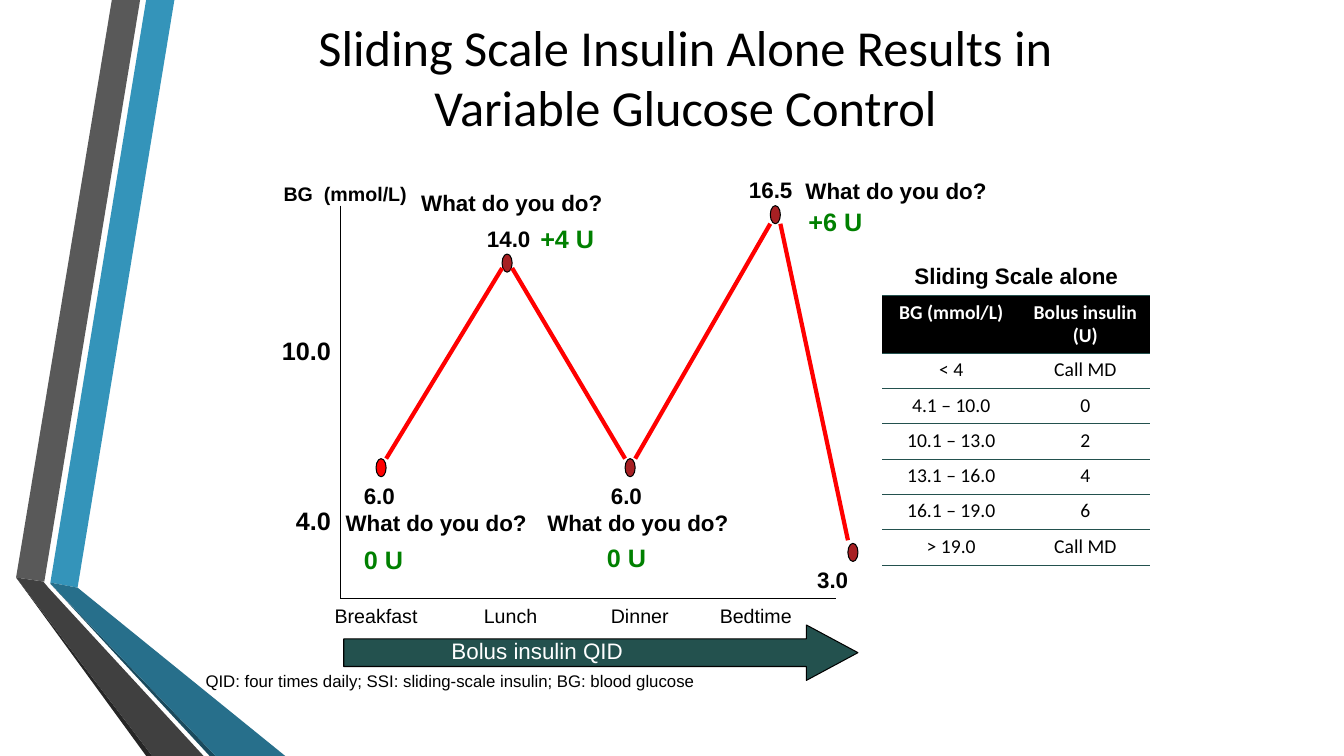
from dataclasses import dataclass
from typing import Optional

import lxml.etree
import pptx
import pptx.dml.color
import pptx.enum.shapes
import pptx.enum.text
import pptx.oxml
import pptx.oxml.ns
import pptx.util

Inches = pptx.util.Inches
Shape = pptx.enum.shapes.MSO_SHAPE
Align = pptx.enum.text.PP_ALIGN
Anchor = pptx.enum.text.MSO_ANCHOR
qn = pptx.oxml.ns.qn


@dataclass(frozen=True)
class Theme:
    body_font: str = "Arial"
    title_font: str = "Calibri"
    title: float = 36
    large: float = 18
    medium: float = 16
    small: float = 14
    note: float = 12
    black: str = "000000"
    white: str = "FFFFFF"
    red: str = "FF0000"
    dark_red: str = "A72023"
    green: str = "008000"
    teal: str = "23514E"


THEME = Theme()


@dataclass(frozen=True)
class Label:
    text: str
    left: float
    top: float
    width: float
    height: float = 0.37
    size: float = THEME.medium
    bold: bool = True
    color: str = THEME.black
    align: Align = Align.LEFT
    font: str = THEME.body_font
    inset: Optional[float] = None
    anchor: Anchor = Anchor.TOP


@dataclass(frozen=True)
class Reading:
    """A glucose marker; join is the height at which its line segments meet it."""
    left: float
    top: float
    join: float
    fill: str = THEME.dark_red


@dataclass(frozen=True)
class Ribbon:
    fill: str
    outline: tuple


RIBBONS = [
    Ribbon("3494BA", ((0.5, 5.78), (0.77, 5.83), (1.73, 0), (1.45, 0))),
    Ribbon("595959", ((1.39, 0), (1.11, 0), (0.16, 5.73), (0.44, 5.77))),
    Ribbon("262626", ((0.16, 5.73), (1.45, 7.5), (1.51, 7.5))),
    Ribbon("1A4A5D", ((0.5, 5.79), (2.08, 7.5), (2.14, 7.5))),
    Ribbon("276F8B", ((0.5, 5.79), (2.14, 7.5), (2.83, 7.5), (0.77, 5.83), (0.5, 5.78))),
    Ribbon("404040", ((2.02, 7.5), (0.48, 5.83), (0.43, 5.77), (0.16, 5.73), (1.51, 7.5))),
]

MARKER_WIDTH, MARKER_HEIGHT = 0.1, 0.18
READINGS = [
    Reading(3.73, 4.55, 4.55, THEME.red),
    Reading(4.98, 2.52, 2.66),
    Reading(6.2, 4.55, 4.55),
    Reading(7.64, 2.04, 2.22),
    Reading(8.41, 5.39, 5.36),
]

AXIS_LEFT, AXIS_TOP, AXIS_BOTTOM, AXIS_RIGHT = 3.38, 2.04, 5.94, 8.29
MEALS = {"Breakfast": 3.22, "Lunch": 4.7, "Dinner": 5.96, "Bedtime": 7.04}
TICKS = {"4.0": 4.96, "10.0": 3.28}
QUESTIONS = [(3.33, 5, 2.4), (4.08, 1.83, 2.13), (5.33, 5, 2.17), (7.89, 1.71, 2.28)]
DOSES = [("0 U", 3.51, 5.35), ("+4 U", 5.26, 2.17), ("0 U", 5.92, 5.33), ("+6 U", 7.92, 2)]

LABELS = [
    Label("Sliding Scale Insulin Alone Results in Variable Glucose Control", 2.55, 0.13, 8.5, 1.25,
          THEME.title, False, align=Align.CENTER, font=THEME.title_font, anchor=Anchor.MIDDLE),
    Label("BG  (mmol/L)", 2.81, 1.8, 1.23, 0.24, THEME.small, align=Align.CENTER, inset=0),
    *[Label(tick, 2.58, top, 0.8, 0.4, THEME.large, align=Align.RIGHT) for tick, top in TICKS.items()],
    *[Label(meal, left, AXIS_BOTTOM, 1.25, 0.33, THEME.small, False) for meal, left in MEALS.items()],
    Label("6.0", 3.51, 4.73, 0.62),
    Label("14.0", 4.67, 2.18, 0.75, align=Align.CENTER),
    Label("6.0", 5.96, 4.73, 0.62),
    Label("16.5", 7.33, 1.7, 0.72),
    Label("3.0", 7.89, 5.57, 0.62, align=Align.RIGHT),
    *[Label("What do you do?", *place) for place in QUESTIONS],
    *[Label(dose, left, top, 0.91, 0.4, THEME.large, color=THEME.green) for dose, left, top in DOSES],
    Label("Sliding Scale alone", 8.83, 2.55, 2.5, align=Align.CENTER),
    Label("Bolus insulin QID", 4.38, 6.27, 2.66, bold=False, color=THEME.white),
    Label("QID: four times daily; SSI: sliding-scale insulin; BG: blood glucose",
          1.94, 6.61, 6.75, 0.33, THEME.note, False),
]

SCALE_ROWS = [
    ("BG (mmol/L)", "Bolus insulin (U)"),
    ("< 4", "Call MD"),
    ("4.1 – 10.0", "0"),
    ("10.1 – 13.0", "2"),
    ("13.1 – 16.0", "4"),
    ("16.1 – 19.0", "6"),
    ("> 19.0", "Call MD"),
]
NO_GRID_STYLE = "{2D5ABB26-0587-4C30-8999-92F81FD0307C}"


def rgb(color: str) -> pptx.dml.color.RGBColor:
    return pptx.dml.color.RGBColor.from_string(color)


def paint(shape, fill: str, line: Optional[str] = None) -> None:
    shape.shadow.inherit = False
    shape.fill.solid()
    shape.fill.fore_color.rgb = rgb(fill)
    if line is None:
        shape.line.fill.background()
    else:
        shape.line.color.rgb = rgb(line)
        shape.line.width = pptx.util.Pt(0.75)


def write(paragraph, text: str, size: float, bold: bool, color: str, align: Align, font: str) -> None:
    paragraph.alignment = align
    run = paragraph.add_run()
    run.text = text
    run.font.name = font
    run.font.size = pptx.util.Pt(size)
    run.font.bold = bold
    run.font.color.rgb = rgb(color)


def add_label(slide, label: Label) -> None:
    box = slide.shapes.add_textbox(*map(Inches, (label.left, label.top, label.width, label.height)))
    frame = box.text_frame
    frame.word_wrap = label.inset is None
    frame.vertical_anchor = label.anchor
    if label.inset is not None:
        frame.margin_left = frame.margin_right = Inches(label.inset)
        frame.margin_top = frame.margin_bottom = Inches(label.inset)
    write(frame.paragraphs[0], label.text, label.size, label.bold, label.color, label.align, label.font)


def add_ribbon(slide, ribbon: Ribbon) -> None:
    points = [(Inches(x), Inches(y)) for x, y in ribbon.outline]
    builder = slide.shapes.build_freeform(*points[0])
    builder.add_line_segments(points[1:], close=True)
    paint(builder.convert_to_shape(), ribbon.fill)


def add_line(slide, start: tuple, end: tuple, color: str, width: float) -> None:
    line = slide.shapes.add_connector(
        pptx.enum.shapes.MSO_CONNECTOR.STRAIGHT, *map(Inches, (*start, *end)))
    line.line.color.rgb = rgb(color)
    line.line.width = pptx.util.Pt(width)
    lxml.etree.SubElement(line._element.spPr, qn("a:effectLst"))


def add_cell_rule(cell, edge: str) -> None:
    rule = pptx.oxml.parse_xml(
        f'<a:{edge} xmlns:a="http://schemas.openxmlformats.org/drawingml/2006/main" w="6350">'
        f'<a:solidFill><a:srgbClr val="{THEME.teal}"/></a:solidFill></a:{edge}>')
    cell._tc.get_or_add_tcPr().insert(0, rule)


def add_scale_table(slide) -> None:
    frame = slide.shapes.add_table(len(SCALE_ROWS), 2, *map(Inches, (8.75, 2.93, 2.66, 2.66)))
    table = frame.table
    table._tbl.tblPr.find(qn("a:tableStyleId")).text = NO_GRID_STYLE
    table.horz_banding = False
    for column, width in zip(table.columns, (1.37, 1.29)):
        column.width = Inches(width)
    for i, texts in enumerate(SCALE_ROWS):
        header = i == 0
        table.rows[i].height = Inches(0.56 if header else 0.35)
        for cell, text in zip(table.rows[i].cells, texts):
            if header:
                cell.fill.solid()
                cell.fill.fore_color.rgb = rgb(THEME.black)
            else:
                cell.fill.background()
            add_cell_rule(cell, "lnB")
            if header:
                add_cell_rule(cell, "lnT")
            write(cell.text_frame.paragraphs[0], text, THEME.small, header,
                  THEME.white if header else THEME.black, Align.CENTER, THEME.title_font)


def main() -> None:
    deck = pptx.Presentation()
    deck.slide_width, deck.slide_height = Inches(13.33), Inches(7.5)
    slide = deck.slides.add_slide(deck.slide_layouts[6])
    for ribbon in RIBBONS:
        add_ribbon(slide, ribbon)
    origin = (AXIS_LEFT, AXIS_BOTTOM)
    add_line(slide, (AXIS_LEFT, AXIS_TOP), origin, THEME.black, 0.5)
    add_line(slide, origin, (AXIS_RIGHT, AXIS_BOTTOM), THEME.black, 0.5)
    add_scale_table(slide)
    qid_arrow = slide.shapes.add_shape(Shape.RIGHT_ARROW, *map(Inches, (3.41, 6.2, 5.1, 0.55)))
    qid_arrow.adjustments[1] = 0.93
    paint(qid_arrow, THEME.teal, THEME.black)
    for reading in READINGS:
        marker = slide.shapes.add_shape(
            Shape.OVAL, *map(Inches, (reading.left, reading.top, MARKER_WIDTH, MARKER_HEIGHT)))
        paint(marker, reading.fill, THEME.black)
    for before, after in zip(READINGS, READINGS[1:]):
        add_line(slide, (before.left + MARKER_WIDTH, before.join), (after.left, after.join), THEME.red, 3)
    for label in LABELS:
        add_label(slide, label)
    deck.save("out.pptx")


if __name__ == "__main__":
    main()
